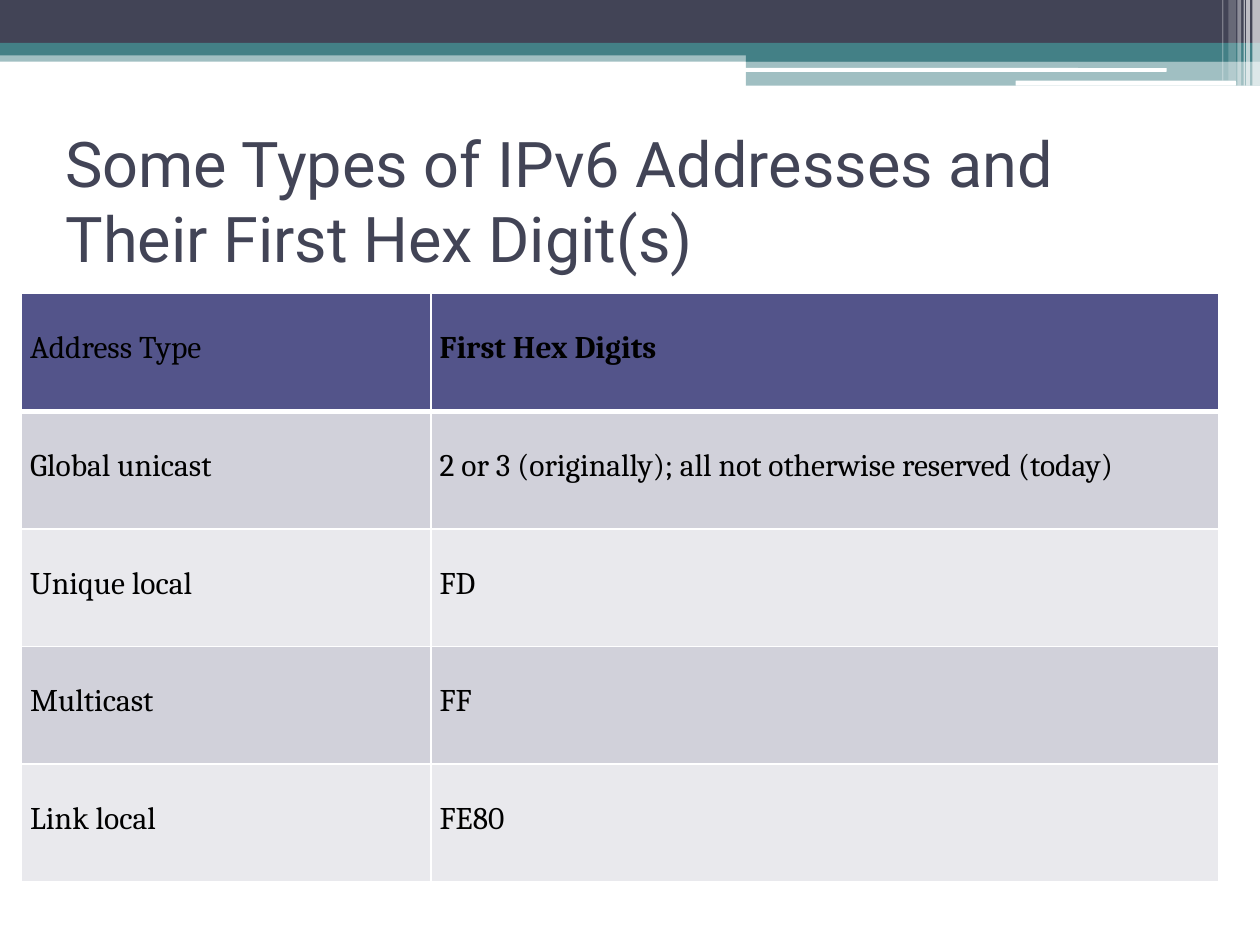
import lxml.etree
import pptx
import pptx.dml.color
import pptx.enum.shapes
import pptx.enum.text
import pptx.oxml.ns
import pptx.util
from pptx.util import Inches

COLORS = {
    "navy": "424456", "teal": "438086", "white": "FFFFFF", "black": "000000",
    "header": "53548A", "dark_band": "D1D1DA", "light_band": "E9E9ED",
}
TITLE = "Some Types of IPv6 Addresses and Their First Hex Digit(s)"
ROWS = [
    ("Address Type", "First Hex Digits"),
    ("Global unicast", "2 or 3 (originally); all not otherwise reserved (today)"),
    ("Unique local", "FD"),
    ("Multicast", "FF"),
    ("Link local", "FE80"),
]
COLUMN_WIDTHS = (3.25, 6.25)
TABLE_LEFT, TABLE_TOP, TABLE_HEIGHT = 0.17, 2.33, 4.67

# Header bands: left, top, width, height, color, opacity in percent
BANDS = [
    (0, 0.4, 10, 0.09, "teal", 50),
    (0, 0, 10, 0.34, "navy", 100),
    (0, 0.34, 10, 0.1, "teal", 100),
    (5.92, 0.39, 4.08, 0.1, "teal", 100),
    (5.92, 0.48, 4.08, 0.2, "teal", 50),
]
ROUNDED_LINES = [
    (5.91, 0.54, 3.35, 0.03, "white", 100),
    (8.06, 0.64, 1.75, 0.04, "white", 100),
]
# Vertical stripes at the right edge: left, width, height, opacity
STRIPES = [
    (9.94, 0.06, 0.68, 65), (9.89, 0.03, 0.68, 65), (9.87, 0.01, 0.68, 60),
    (9.82, 0.03, 0.68, 40), (9.75, 0.06, 0.64, 20), (9.7, 0.01, 0.64, 30),
]


def rgb(name):
    return pptx.dml.color.RGBColor.from_string(COLORS[name])


def write_text(frame, text, size=18, font="Cambria", color="black", bold=False):
    para = frame.paragraphs[0]
    para.alignment = pptx.enum.text.PP_ALIGN.LEFT
    span = para.add_run()
    span.text = text
    span.font.size = pptx.util.Pt(size)
    span.font.name = font
    span.font.bold = bold
    span.font.color.rgb = rgb(color)


def add_band(slide, kind, left, top, width, height, color, opacity):
    box = slide.shapes.add_shape(
        kind, Inches(left), Inches(top), Inches(width), Inches(height))
    box.shadow.inherit = False
    box.line.fill.background()
    box.fill.solid()
    box.fill.fore_color.rgb = rgb(color)
    if opacity < 100:
        color_node = box.fill._xPr.find(".//" + pptx.oxml.ns.qn("a:srgbClr"))
        lxml.etree.SubElement(
            color_node, pptx.oxml.ns.qn("a:alpha"), val=str(opacity * 1000))


def set_borders(cell, widths):
    """Draw white borders; widths are in points, keyed L, R, T, B."""
    properties = cell._tc.get_or_add_tcPr()
    for index, (side, width) in enumerate(widths.items()):
        line = lxml.etree.Element(
            pptx.oxml.ns.qn("a:ln" + side), w=str(pptx.util.Pt(width)))
        fill = lxml.etree.SubElement(line, pptx.oxml.ns.qn("a:solidFill"))
        lxml.etree.SubElement(
            fill, pptx.oxml.ns.qn("a:srgbClr"), val=COLORS["white"])
        properties.insert(index, line)


def add_address_table(slide):
    table = slide.shapes.add_table(
        len(ROWS), len(COLUMN_WIDTHS), Inches(TABLE_LEFT), Inches(TABLE_TOP),
        Inches(sum(COLUMN_WIDTHS)), Inches(TABLE_HEIGHT)).table
    for column, width in zip(table.columns, COLUMN_WIDTHS):
        column.width = Inches(width)
    for row_index, texts in enumerate(ROWS):
        fill = "header" if row_index == 0 else ("light_band", "dark_band")[row_index % 2]
        borders = {"L": 1, "R": 1, "T": 3 if row_index == 1 else 1,
                   "B": 3 if row_index == 0 else 1}
        for column_index, text in enumerate(texts):
            cell = table.cell(row_index, column_index)
            cell.margin_left = cell.margin_right = Inches(0.07)
            cell.margin_top, cell.margin_bottom = 0, Inches(0.06)
            cell.vertical_anchor = pptx.enum.text.MSO_ANCHOR.MIDDLE
            cell.fill.solid()
            cell.fill.fore_color.rgb = rgb(fill)
            set_borders(cell, borders)
            write_text(cell.text_frame, text,
                       bold=row_index == 0 and column_index == 1)


def main():
    deck = pptx.Presentation()
    deck.slide_width, deck.slide_height = Inches(10), Inches(7.5)
    page = deck.slides.add_slide(deck.slide_layouts[5])

    # Decorative header
    shape_kinds = pptx.enum.shapes.MSO_SHAPE
    for band in BANDS:
        add_band(page, shape_kinds.RECTANGLE, *band)
    for line in ROUNDED_LINES:
        add_band(page, shape_kinds.ROUNDED_RECTANGLE, *line)
    for left, width, height, opacity in STRIPES:
        add_band(page, shape_kinds.RECTANGLE, left, 0, width, height, "white", opacity)

    # Title
    title = page.shapes.title
    title.left, title.top = Inches(0.42), Inches(1)
    title.width, title.height = Inches(9), Inches(1.17)
    title.text_frame.auto_size = pptx.enum.text.MSO_AUTO_SIZE.NONE
    title.text_frame.vertical_anchor = pptx.enum.text.MSO_ANCHOR.MIDDLE
    write_text(title.text_frame, TITLE, size=36, font="Roboto", color="navy")

    # Address types
    add_address_table(page)
    deck.save("out.pptx")


if __name__ == "__main__":
    main()
